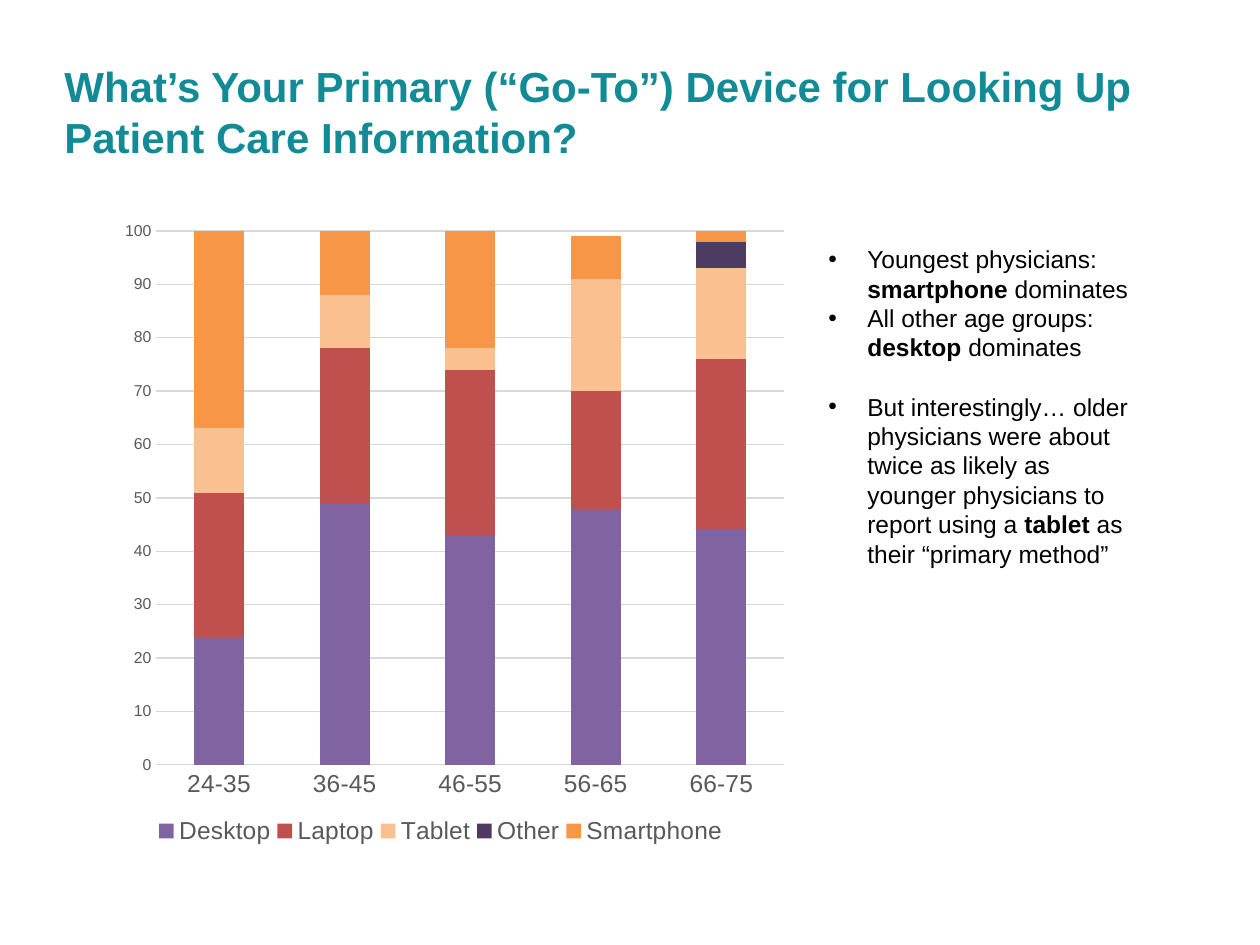
from lxml import etree
from pptx import Presentation
from pptx.chart.data import CategoryChartData
from pptx.dml.color import RGBColor
from pptx.enum.chart import XL_CHART_TYPE, XL_LEGEND_POSITION, XL_TICK_MARK
from pptx.enum.text import MSO_ANCHOR
from pptx.oxml.ns import qn
from pptx.util import Pt

PX = 7257  # EMU per pixel at 126 px to the inch
COLORS = {
    "title": "128B97", "text": "000000", "label": "595959", "grid": "D9D9D9",
    "Desktop": "8064A2", "Laptop": "C0504D", "Tablet": "FAC090",
    "Other": "4D3B62", "Smartphone": "F79646",
}


def style(font, size, color, bold=False):
    font.name, font.size, font.bold = "Arial", Pt(size), bold
    font.color.rgb = RGBColor.from_string(COLORS[color])


def place(element, index, **fractions):
    """Give a chart part a fixed place, in fractions of the chart."""
    for old in element.findall(qn("c:layout")):
        element.remove(old)
    layout = etree.Element(qn("c:layout"))
    manual = etree.SubElement(layout, qn("c:manualLayout"))
    if element.tag == qn("c:plotArea"):
        etree.SubElement(manual, qn("c:layoutTarget")).set("val", "inner")
    for mode in ("xMode", "yMode"):
        etree.SubElement(manual, qn(f"c:{mode}")).set("val", "edge")
    for name, value in fractions.items():
        etree.SubElement(manual, qn(f"c:{name}")).set("val", str(value))
    element.insert(index, layout)


prs = Presentation()
prs.slide_width, prs.slide_height = 1260 * PX, 945 * PX
slide = prs.slides.add_slide(prs.slide_layouts[6])

# Title
title = slide.shapes.add_textbox(52 * PX, 39 * PX, 1154 * PX, 144 * PX).text_frame
title.word_wrap = True
title.vertical_anchor = MSO_ANCHOR.MIDDLE
title.text = "What’s Your Primary (“Go-To”) Device for Looking Up Patient Care Information?"
style(title.paragraphs[0].runs[0].font, 24, "title", True)

# Device share by age group
shares = CategoryChartData()
shares.categories = ["24-35", "36-45", "46-55", "56-65", "66-75"]
for device, values in {
    "Desktop": (24, 49, 43, 48, 44),
    "Laptop": (27, 29, 31, 22, 32),
    "Tablet": (12, 10, 4, 21, 17),
    "Other": (None, None, None, None, 5),
    "Smartphone": (37, 12, 22, 8, 2),
}.items():
    shares.add_series(device, values)
chart = slide.shapes.add_chart(
    XL_CHART_TYPE.COLUMN_STACKED, 111 * PX, 209 * PX, 687 * PX, 648 * PX, shares).chart
style(chart.font, 10, "text")
chart.has_title = False

columns = chart.plots[0]
columns.gap_width, columns.overlap = 150, 100
columns.vary_by_categories = False
for series in columns.series:
    series.format.fill.solid()
    series.format.fill.fore_color.rgb = RGBColor.from_string(COLORS[series.name])

# Axes
ages, percent = chart.category_axis, chart.value_axis
for axis, size in ((ages, 14), (percent, 9)):
    axis.major_tick_mark = axis.minor_tick_mark = XL_TICK_MARK.NONE
    style(axis.tick_labels.font, size, "label")
percent.minimum_scale, percent.maximum_scale, percent.major_unit = 0, 100, 10
percent.has_major_gridlines = True
percent.format.line.fill.background()
for line in (ages.format.line, percent.major_gridlines.format.line):
    line.width = Pt(0.75)
    line.color.rgb = RGBColor.from_string(COLORS["grid"])

# Legend and plot position
chart.has_legend = True
chart.legend.position = XL_LEGEND_POSITION.BOTTOM
chart.legend.include_in_layout = False
style(chart.legend.font, 14, "label")
place(columns._element.getparent(), 0, x=0.066, y=0.034, w=0.914, h=0.824)
place(chart.legend._element, 1, x=0.06, y=0.93, w=0.84, h=0.06)

# Findings: text before, bold device, text after
findings = [
    ("Youngest physicians: ", "smartphone ", "dominates"),
    ("All other age groups: ", "desktop ", "dominates"),
    ("But interestingly… older physicians were about twice as likely as younger "
     "physicians to report using a ", "tablet ", "as their “primary method”"),
]
notes = slide.shapes.add_textbox(816 * PX, 238 * PX, 330 * PX, 388 * PX).text_frame
notes.word_wrap = True
for number, parts in enumerate(findings):
    finding = notes.paragraphs[0] if number == 0 else notes.add_paragraph()
    props = finding._p.get_or_add_pPr()
    props.set("marL", str(39 * PX))
    props.set("indent", str(-39 * PX))
    etree.SubElement(props, qn("a:buFont")).set("typeface", "Arial")
    etree.SubElement(props, qn("a:buChar")).set("char", "•")
    for part in parts:
        run = finding.add_run()
        run.text = part
        style(run.font, 14, "text", part == parts[1])
finding.space_before = Pt(17)

prs.save("out.pptx")
